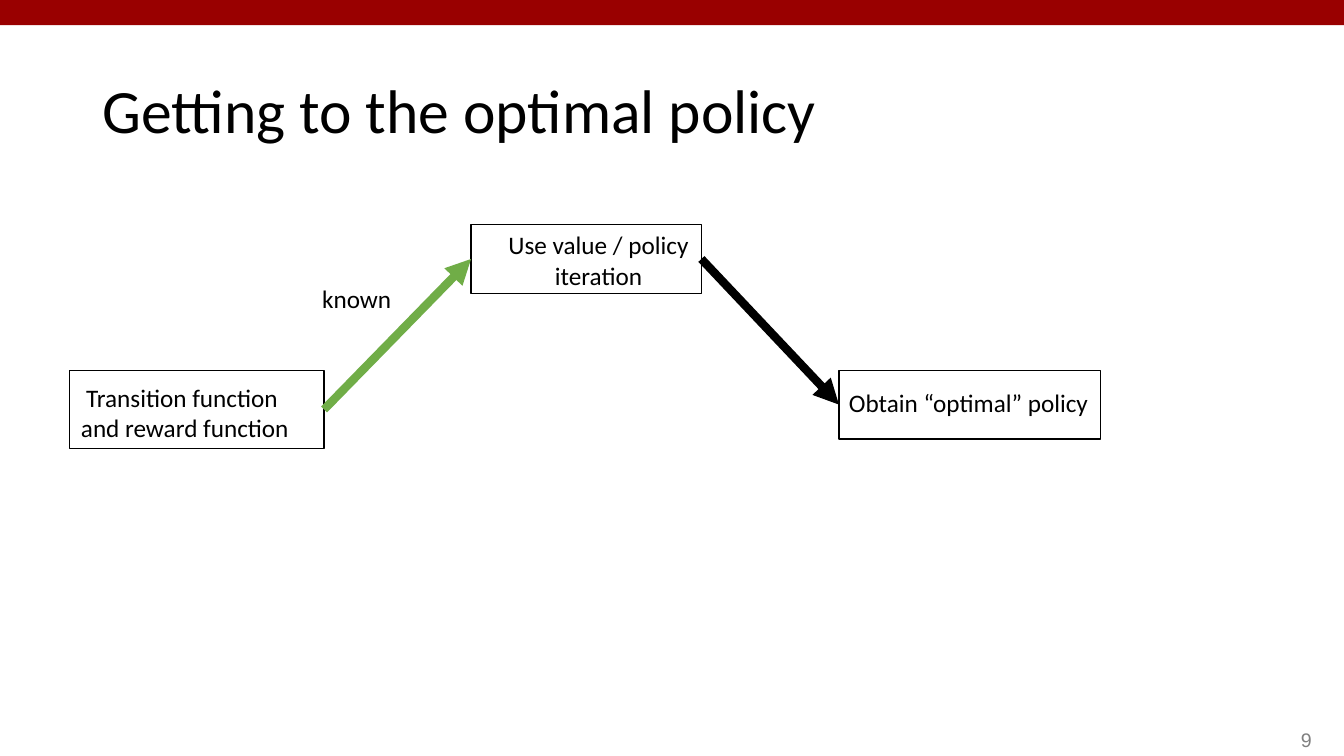
from pptx import Presentation
from pptx.dml.color import RGBColor
from pptx.enum.shapes import MSO_CONNECTOR, MSO_SHAPE
from pptx.enum.text import MSO_ANCHOR, PP_ALIGN
from pptx.oxml.ns import qn
from pptx.util import Pt
from lxml import etree

RECTANGLE = MSO_SHAPE.RECTANGLE
STRAIGHT = MSO_CONNECTOR.STRAIGHT
LEFT, CENTER, RIGHT = PP_ALIGN.LEFT, PP_ALIGN.CENTER, PP_ALIGN.RIGHT
TOP, MIDDLE, BOTTOM = MSO_ANCHOR.TOP, MSO_ANCHOR.MIDDLE, MSO_ANCHOR.BOTTOM
LEFT_SITE, RIGHT_SITE = 1, 3

COLORS = {"banner": "990000", "ink": "000000", "known": "70AD47", "number": "808080"}


class PolicySlide:
    """Holds the text style and the current slide."""

    def __init__(self, page, font="Calibri", size=18):
        self.page, self.font, self.size = page, font, size

    def color(self, name):
        return RGBColor.from_string(COLORS[name])

    def set_text(self, frame, text, size, align, anchor, font=None, color="ink"):
        frame.text = text
        frame.vertical_anchor = anchor
        for para in frame.paragraphs:
            para.alignment = align
            for span in para.runs:
                span.font.name = font or self.font
                span.font.size = Pt(size)
                span.font.color.rgb = self.color(color)

    def title(self, text, place):
        box = self.page.shapes.title
        box.left, box.top, box.width, box.height = map(Pt, place)
        self.set_text(box.text_frame, text, 44, LEFT, MIDDLE)
        box.text_frame.paragraphs[0].line_spacing = 0.9

    def label(self, text, place, align=LEFT, anchor=TOP, size=None, wrap=True, **look):
        box = self.page.shapes.add_textbox(*map(Pt, place))
        box.text_frame.word_wrap = wrap
        self.set_text(box.text_frame, text, size or self.size, align, anchor, **look)

    def rectangle(self, place, fill=None):
        box = self.page.shapes.add_shape(RECTANGLE, *map(Pt, place))
        box.shadow.inherit = False
        if fill:
            box.fill.solid()
            box.fill.fore_color.rgb = self.color(fill)
            box.line.fill.background()
        else:
            box.fill.background()
            box.line.color.rgb = self.color("ink")
            box.line.width = Pt(1)
        return box

    def arrow(self, source, target, color):
        arrow = self.page.shapes.add_connector(STRAIGHT, 0, 0, 0, 0)
        arrow.begin_connect(source, RIGHT_SITE)
        arrow.end_connect(target, LEFT_SITE)
        arrow.line.color.rgb = self.color(color)
        arrow.line.width = Pt(6)
        properties = arrow.element.spPr
        etree.SubElement(properties.find(qn("a:ln")), qn("a:tailEnd"), type="triangle")
        etree.SubElement(properties, qn("a:effectLst"))


def main():
    deck = Presentation()
    deck.slide_width, deck.slide_height = Pt(960), Pt(540)
    slide = PolicySlide(deck.slides.add_slide(deck.slide_layouts[5]))

    # Banner, page number and title
    slide.rectangle((0, 0, 960, 18), fill="banner")
    slide.label("9", (744, 504, 200, 36), RIGHT, BOTTOM, size=14, font="Arial", color="number")
    slide.title("Getting to the optimal policy", (66, 28.75, 828, 104.4))

    # Boxes of the flow
    functions = slide.rectangle((49.5, 264.5, 182, 56))
    iteration = slide.rectangle((336.5, 160.5, 164.5, 49))
    policy = slide.rectangle((599.25, 264.5, 187, 49))

    # Arrows between the boxes
    slide.arrow(functions, iteration, "known")
    slide.arrow(iteration, policy, "ink")

    # Labels
    slide.label("Transition function \nand reward function", (49.5, 269.5, 165, 51), CENTER, wrap=False)
    slide.label("Use value / policy iteration", (345, 160.5, 165, 51), CENTER)
    slide.label("known", (223, 199, 65, 29))
    slide.label("Obtain “optimal” policy", (599.25, 273, 187, 29), wrap=False)

    deck.save("out.pptx")


if __name__ == "__main__":
    main()
